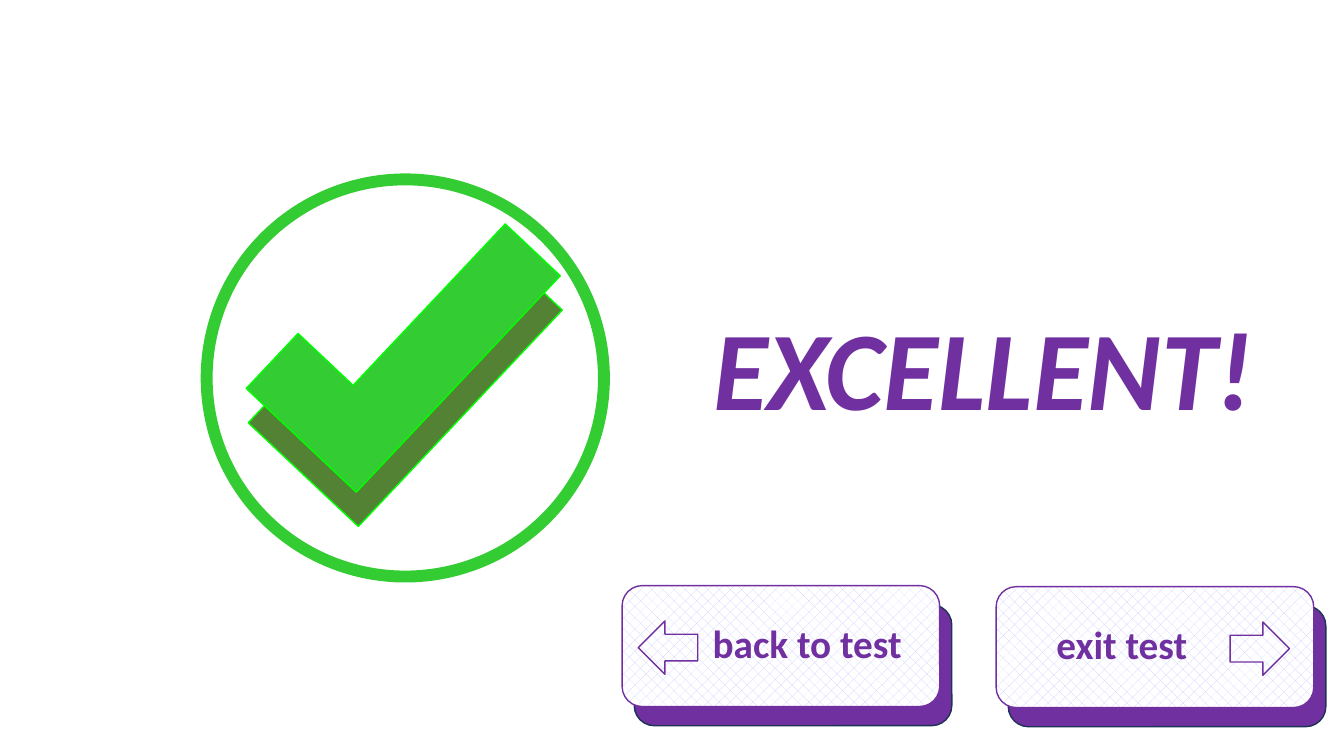
from pptx import Presentation
from pptx import util as u
from pptx.dml.color import RGBColor
from pptx.enum import dml, shapes, text
from pptx.oxml import ns

COLORS = {
    "purple": "7030A0",
    "navy": "1E3256",
    "lavender": "CCCCFF",
    "white": "FFFFFF",
    "green": "33CC33",
    "lime": "00FF00",
    "olive": "548235",
}
SHAPE = shapes.MSO_SHAPE


def color(name):
    """Return the named colour."""
    return RGBColor.from_string(COLORS[name])


def add_outlined(slide, kind, box, line, width=1, fill=None):
    """Add a preset shape with an outline and an optional solid fill."""
    shape = slide.shapes.add_shape(kind, *map(u.Inches, box))
    shape.shadow.inherit = False
    shape.line.color.rgb = color(line)
    shape.line.width = u.Pt(width)
    if fill:
        shape.fill.solid()
        shape.fill.fore_color.rgb = color(fill)
    else:
        shape.fill.background()
    return shape


def add_run(paragraph, words, size):
    """Add a bold purple run to a paragraph."""
    run = paragraph.add_run()
    run.text = words
    run.font.name = "Calibri"
    run.font.size = u.Pt(size)
    run.font.bold = True
    run.font.color.rgb = color("purple")
    return run


def add_check_mark(slide, left, top, diameter):
    """Draw a ringed check mark with a darker one behind it."""
    for dx, dy, fill in ((1.22, 0.38, "olive"), (1.2, 0.04, "green")):
        box = (left + dx, top + dy, 1.5, 2.95)
        check = add_outlined(slide, SHAPE.RECTANGLE, box, "lime", fill=fill)
        check.rotation = 43.3
        properties = check.element.spPr
        properties.find(ns.qn("a:prstGeom")).set("prst", "corner")
        properties.find(ns.qn("a:xfrm")).set("flipH", "1")
    ring = (left, top, diameter, diameter)
    add_outlined(slide, SHAPE.FLOWCHART_CONNECTOR, ring, "green", 8.5)


def add_praise(slide, left, top, width, height):
    """Write the large praise line."""
    box = slide.shapes.add_textbox(*map(u.Inches, (left, top, width, height)))
    box.text_frame.word_wrap = False
    paragraph = box.text_frame.paragraphs[0]
    paragraph.alignment = text.PP_ALIGN.CENTER
    add_run(paragraph, "EXCELLENT!", 80).font.italic = True


def add_button(slide, left, top, label, inset, arrow, arrow_dx):
    """Draw a patterned button with its raised edge, label and arrow."""
    width, height = 3.15, 1.2
    edge = (left + 0.12, top + 0.19, width, height)
    add_outlined(slide, SHAPE.ROUNDED_RECTANGLE, edge, "navy", fill="purple")
    face = add_outlined(slide, SHAPE.ROUNDED_RECTANGLE,
                        (left, top, width, height), "purple")
    face.fill.patterned()
    face.fill.pattern = dml.MSO_PATTERN.PERCENT_25
    face.fill.fore_color.rgb = color("lavender")
    face.fill.back_color.rgb = color("white")
    frame = face.text_frame
    frame.word_wrap = True
    frame.vertical_anchor = text.MSO_ANCHOR.MIDDLE
    frame.margin_left = u.Inches(inset)
    paragraph = frame.paragraphs[0]
    paragraph.alignment = text.PP_ALIGN.LEFT
    paragraph.line_spacing = 0.9
    paragraph.space_before = u.Pt(10)
    add_run(paragraph, label, 28)
    add_outlined(slide, arrow, (left + arrow_dx, top + 0.35, 0.59, 0.53), "purple")


def main():
    """Build and save the slide."""
    presentation = Presentation()
    presentation.slide_width = u.Inches(13.33)
    presentation.slide_height = u.Inches(7.5)
    slide = presentation.slides.add_slide(presentation.slide_layouts[6])
    add_check_mark(slide, 2.05, 1.78, 3.94)
    add_praise(slide, 6.95, 2.91, 5.61, 1.45)
    add_button(slide, 6.17, 5.81, "back to test", 0.84, SHAPE.LEFT_ARROW, 0.16)
    add_button(slide, 9.88, 5.82, "exit test", 0.54, SHAPE.RIGHT_ARROW, 2.32)
    presentation.save("out.pptx")


if __name__ == "__main__":
    main()
